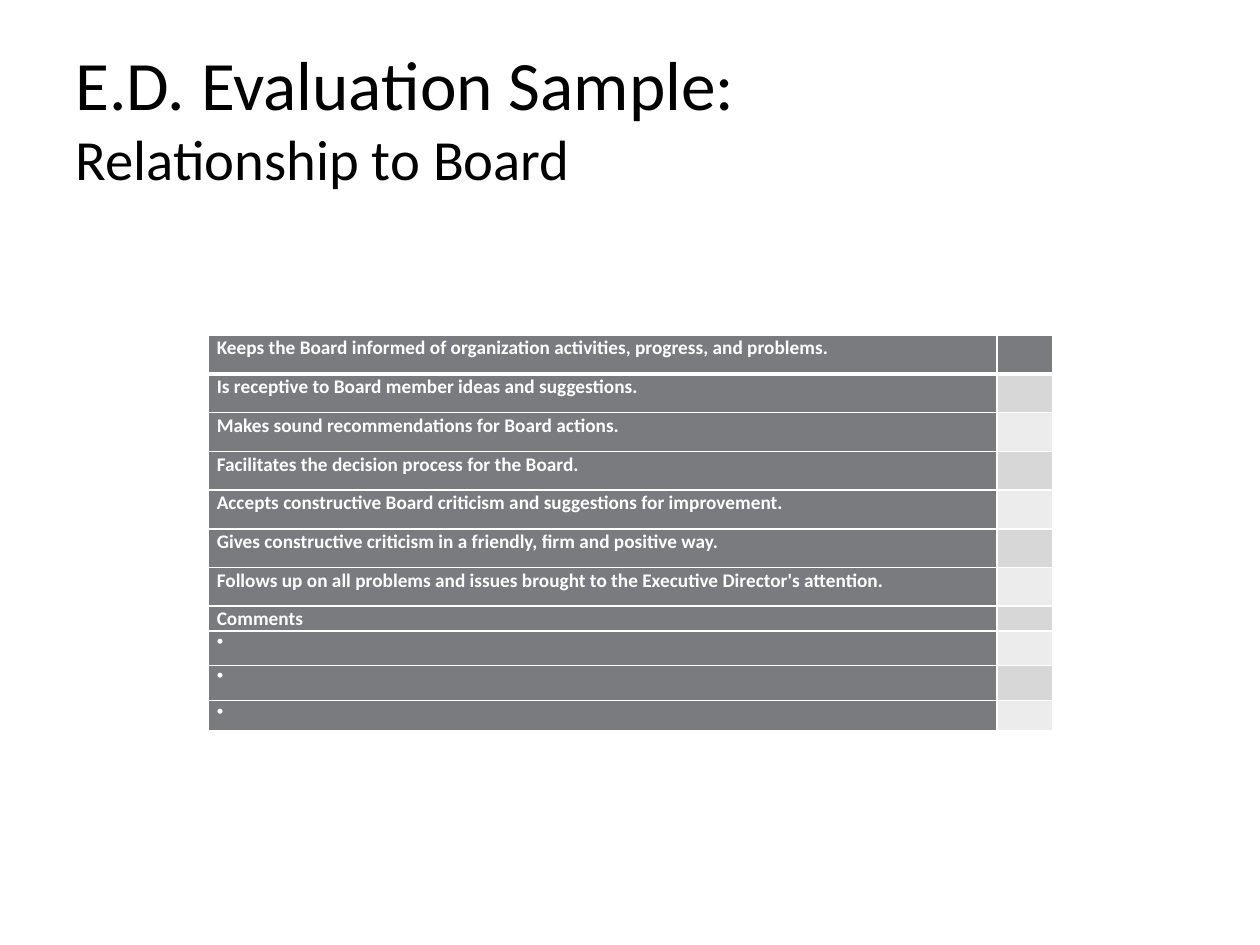
from dataclasses import dataclass

from lxml import etree
from pptx import Presentation
from pptx.dml.color import RGBColor
from pptx.enum import text
from pptx.oxml import ns
from pptx.util import Cm, Pt


@dataclass(frozen=True)
class Theme:
    font: str = "Calibri"
    title_size: float = 39.6
    subtitle_size: float = 32.4
    table_size: float = 11
    ink: str = "000000"
    paper: str = "FFFFFF"
    label_fill: str = "797B7E"
    bands: tuple = ("ECECEC", "D7D7D8")
    rule: float = 1
    header_rule: float = 3


THEME = Theme()
CRITERIA = [
    "Keeps the Board informed of organization activities, progress, and problems.",
    "Is receptive to Board member ideas and suggestions.",
    "Makes sound recommendations for Board actions.",
    "Facilitates the decision process for the Board.",
    "Accepts constructive Board criticism and suggestions for improvement.",
    "Gives constructive criticism in a friendly, firm and positive way.",
    "Follows up on all problems and issues brought to the Executive Director's attention.",
]
COMMENT_HEIGHTS = [0.69, 0.71, 0.6]
ROWS = ([(criterion, 0.78) for criterion in CRITERIA] + [("Comments", 0.47)]
        + [("", height) for height in COMMENT_HEIGHTS])
COLUMN_WIDTHS = [15.9, 1.12]


def add_title(slide, heading, subheading):
    title = slide.shapes.title
    title.left, title.top, title.width, title.height = Cm(1.27), Cm(0.76), Cm(22.86), Cm(3.18)
    frame = title.text_frame
    frame.auto_size = text.MSO_AUTO_SIZE.NONE
    frame.vertical_anchor = text.MSO_ANCHOR.MIDDLE
    paragraph = frame.paragraphs[0]
    paragraph.alignment = text.PP_ALIGN.LEFT
    paragraph.font.name = THEME.font
    paragraph.font.color.rgb = RGBColor.from_string(THEME.ink)
    first = paragraph.add_run()
    first.text, first.font.size = heading, Pt(THEME.title_size)
    paragraph.add_line_break()
    second = paragraph.add_run()
    second.text, second.font.size = subheading, Pt(THEME.subtitle_size)


def set_borders(cell, bottom):
    """Rule all four sides; the bottom has its own weight in points."""
    properties = cell._tc.get_or_add_tcPr()
    weights = {"lnL": THEME.rule, "lnR": THEME.rule, "lnT": THEME.rule, "lnB": bottom}
    for position, (side, weight) in enumerate(weights.items()):
        line = etree.Element(ns.qn(f"a:{side}"), w=str(Pt(weight)))
        fill = etree.SubElement(line, ns.qn("a:solidFill"))
        etree.SubElement(fill, ns.qn("a:srgbClr"), val=THEME.paper)
        properties.insert(position, line)


def add_bullet(paragraph):
    """Show a bullet on a line left open for a comment."""
    paragraph.add_run().text = " "
    properties = paragraph._p.get_or_add_pPr()
    properties.set("marL", str(Cm(0.4)))
    properties.set("indent", str(-Cm(0.4)))
    bullet = etree.Element(ns.qn("a:buChar"), char="•")
    properties.find(ns.qn("a:defRPr")).addprevious(bullet)


def format_cell(cell, fill, bottom):
    cell.margin_left = cell.margin_right = Cm(0.17)
    cell.margin_top = cell.margin_bottom = 0
    cell.fill.solid()
    cell.fill.fore_color.rgb = RGBColor.from_string(fill)
    set_borders(cell, bottom)
    paragraph = cell.text_frame.paragraphs[0]
    paragraph.line_spacing = 1.05
    font = paragraph.font
    font.name, font.size, font.bold = THEME.font, Pt(THEME.table_size), True
    font.color.rgb = RGBColor.from_string(THEME.paper)
    if not cell.text:
        etree.SubElement(paragraph._p, ns.qn("a:endParaRPr"), sz=str(int(THEME.table_size * 100)))


def add_evaluation_table(slide):
    heights = [height for _, height in ROWS]
    table = slide.shapes.add_table(
        len(ROWS), len(COLUMN_WIDTHS), Cm(4.2), Cm(6.76),
        Cm(sum(COLUMN_WIDTHS)), Cm(sum(heights))).table
    for column, width in zip(table.columns, COLUMN_WIDTHS):
        column.width = Cm(width)
    for index, (label, height) in enumerate(ROWS):
        table.rows[index].height = Cm(height)
        is_header = index == 0
        bottom = THEME.header_rule if is_header else THEME.rule
        rating_fill = THEME.label_fill if is_header else THEME.bands[index % 2]
        label_cell, rating_cell = table.cell(index, 0), table.cell(index, 1)
        label_cell.text = label
        format_cell(label_cell, THEME.label_fill, bottom)
        format_cell(rating_cell, rating_fill, bottom)
        if not label:
            add_bullet(label_cell.text_frame.paragraphs[0])


def main():
    deck = Presentation()
    deck.slide_width, deck.slide_height = Cm(25.4), Cm(19.05)
    slide = deck.slides.add_slide(deck.slide_layouts[5])
    add_title(slide, "E.D. Evaluation Sample:", "Relationship to Board")
    add_evaluation_table(slide)
    deck.save("out.pptx")


if __name__ == "__main__":
    main()
